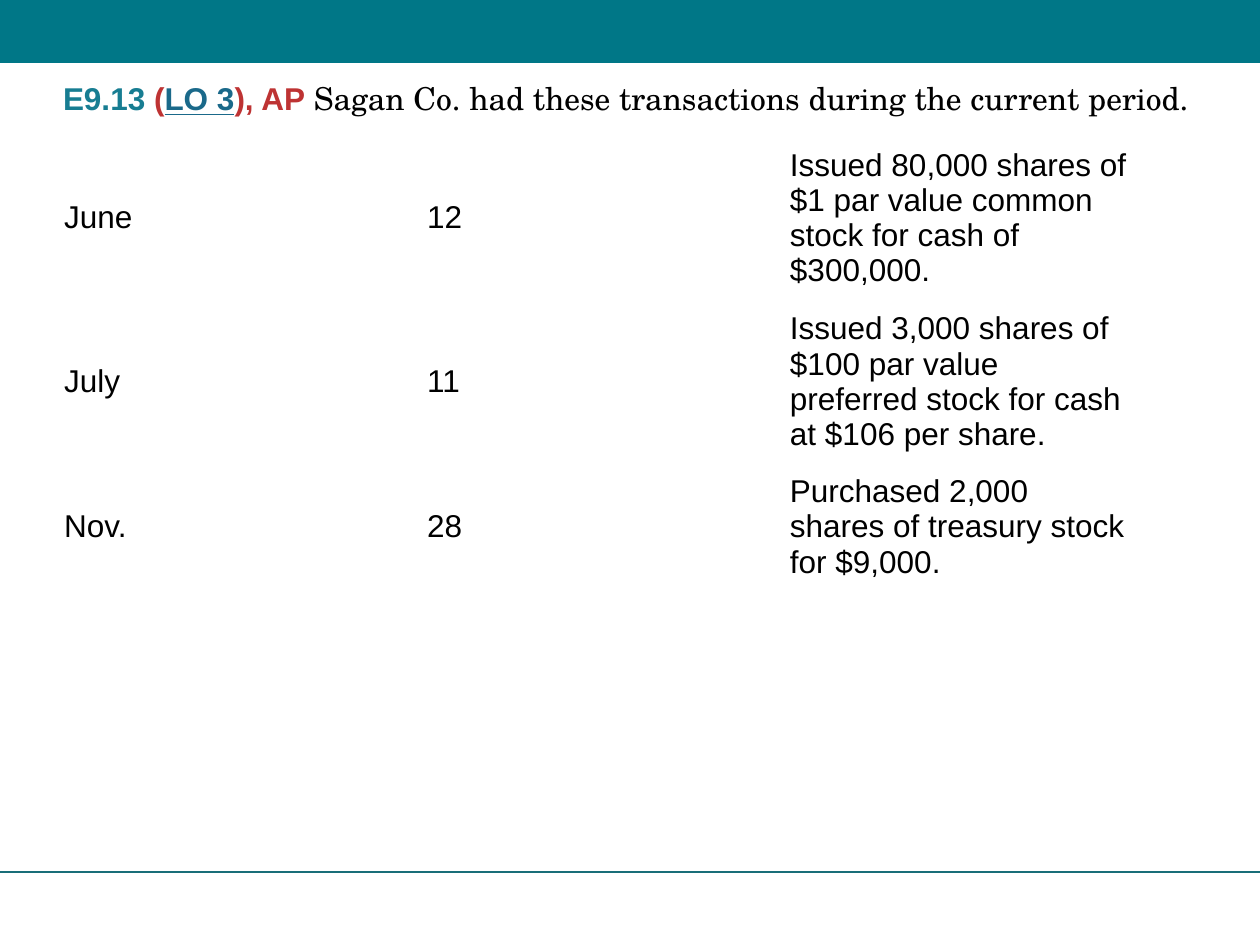
from lxml import etree
from pptx import Presentation
from pptx.dml.color import RGBColor
from pptx.enum.shapes import MSO_CONNECTOR, MSO_SHAPE
from pptx.enum.text import MSO_ANCHOR, MSO_AUTO_SIZE, PP_ALIGN
from pptx.oxml.ns import qn
from pptx.util import Inches, Pt

RECTANGLE = MSO_SHAPE.RECTANGLE
STRAIGHT = MSO_CONNECTOR.STRAIGHT
TOP, MIDDLE = MSO_ANCHOR.TOP, MSO_ANCHOR.MIDDLE
FIT_SHAPE = MSO_AUTO_SIZE.SHAPE_TO_FIT_TEXT
LEFT = PP_ALIGN.LEFT

WIDTH, HEIGHT = 10, 7.5
TITLE_ONLY = 5
LINE_HEIGHT, CELL_PADDING = 0.27, 0.05
COLORS = {
    "band": "007787",
    "rule": "196E78",
    "exercise": "177D92",
    "objective": "BE3333",
    "reference": "1A698A",
    "body": "000000",
}

HEADING = [
    ("E9.13 ", "exercise", {"bold": True}),
    ("(", "objective", {"bold": True}),
    ("LO 3", "reference", {"bold": True, "underline": True}),
    ("), AP", "objective", {"bold": True}),
    (
        " Sagan Co. had these transactions during the current period.",
        "body",
        {"name": "TeX Gyre Schola", "bold": False},
    ),
]
TRANSACTIONS = [
    ("June", "12", "Issued 80,000 shares of $1 par value common stock for cash of $300,000."),
    ("July", "11", "Issued 3,000 shares of $100 par value preferred stock for cash at $106 per share."),
    ("Nov.", "28", "Purchased 2,000 shares of treasury stock for $9,000."),
]
LINES_PER_TRANSACTION = [4, 4, 3]


def apply(target, values):
    for attribute, value in values.items():
        setattr(target, attribute, value)


class SlideBuilder:
    text_format = {"name": "Arial", "size": Pt(18)}
    cell_format = {
        "margin_top": Inches(CELL_PADDING),
        "margin_bottom": Inches(CELL_PADDING),
        "vertical_anchor": MIDDLE,
    }

    def __init__(self, slide):
        self.slide = slide

    def color(self, role):
        return RGBColor.from_string(COLORS[role])

    def add_text(self, paragraph, text, role="body", changes=None):
        run = paragraph.add_run()
        run.text = text
        apply(run.font, self.text_format | (changes or {}))
        run.font.color.rgb = self.color(role)
        run._r.get_or_add_rPr().set("kern", "0")

    def band(self, share):
        band = self.slide.shapes.add_shape(
            RECTANGLE, 0, 0, Inches(WIDTH), Inches(HEIGHT * share)
        )
        band.shadow.inherit = False
        band.fill.solid()
        band.fill.fore_color.rgb = self.color("band")
        band.line.fill.background()

    def rule(self, share):
        level = Inches(HEIGHT * share)
        rule = self.slide.shapes.add_connector(STRAIGHT, 0, level, Inches(WIDTH), level)
        rule.line.color.rgb = self.color("rule")
        rule.line.width = Pt(1)
        etree.SubElement(rule._element.spPr, qn("a:effectLst"))

    def title(self, left, top, width, height, parts):
        title = self.slide.shapes.title
        apply(title, {
            "left": Inches(left), "top": Inches(top),
            "width": Inches(width), "height": Inches(height),
        })
        apply(title.text_frame, {
            "margin_left": 0, "margin_right": 0, "margin_top": 0, "margin_bottom": 0,
            "word_wrap": False, "auto_size": FIT_SHAPE, "vertical_anchor": TOP,
        })
        paragraph = title.text_frame.paragraphs[0]
        paragraph.alignment = LEFT
        for text, role, changes in parts:
            self.add_text(paragraph, text, role, changes)

    def table(self, left, top, column_width, rows, line_counts):
        heights = [count * LINE_HEIGHT + 2 * CELL_PADDING for count in line_counts]
        columns = len(rows[0])
        table = self.slide.shapes.add_table(
            len(rows), columns, Inches(left), Inches(top),
            Inches(columns * column_width), Inches(sum(heights)),
        ).table
        apply(table, {"first_row": False, "horz_banding": False})
        for column in table.columns:
            column.width = Inches(column_width)
        for row, height, texts in zip(table.rows, heights, rows):
            row.height = Inches(height)
            for cell, text in zip(row.cells, texts):
                cell.fill.background()
                apply(cell, self.cell_format)
                self.add_text(cell.text_frame.paragraphs[0], text)


def main():
    presentation = Presentation()
    apply(presentation, {"slide_width": Inches(WIDTH), "slide_height": Inches(HEIGHT)})
    layout = presentation.slide_layouts[TITLE_ONLY]
    builder = SlideBuilder(presentation.slides.add_slide(layout))
    builder.band(1 / 15)
    builder.rule(6.92 / HEIGHT)
    builder.table(0.41, 1.08, 2.88, TRANSACTIONS, LINES_PER_TRANSACTION)
    builder.title(0.5, 0.63, WIDTH, 0.5, HEADING)
    presentation.save("out.pptx")


if __name__ == "__main__":
    main()
